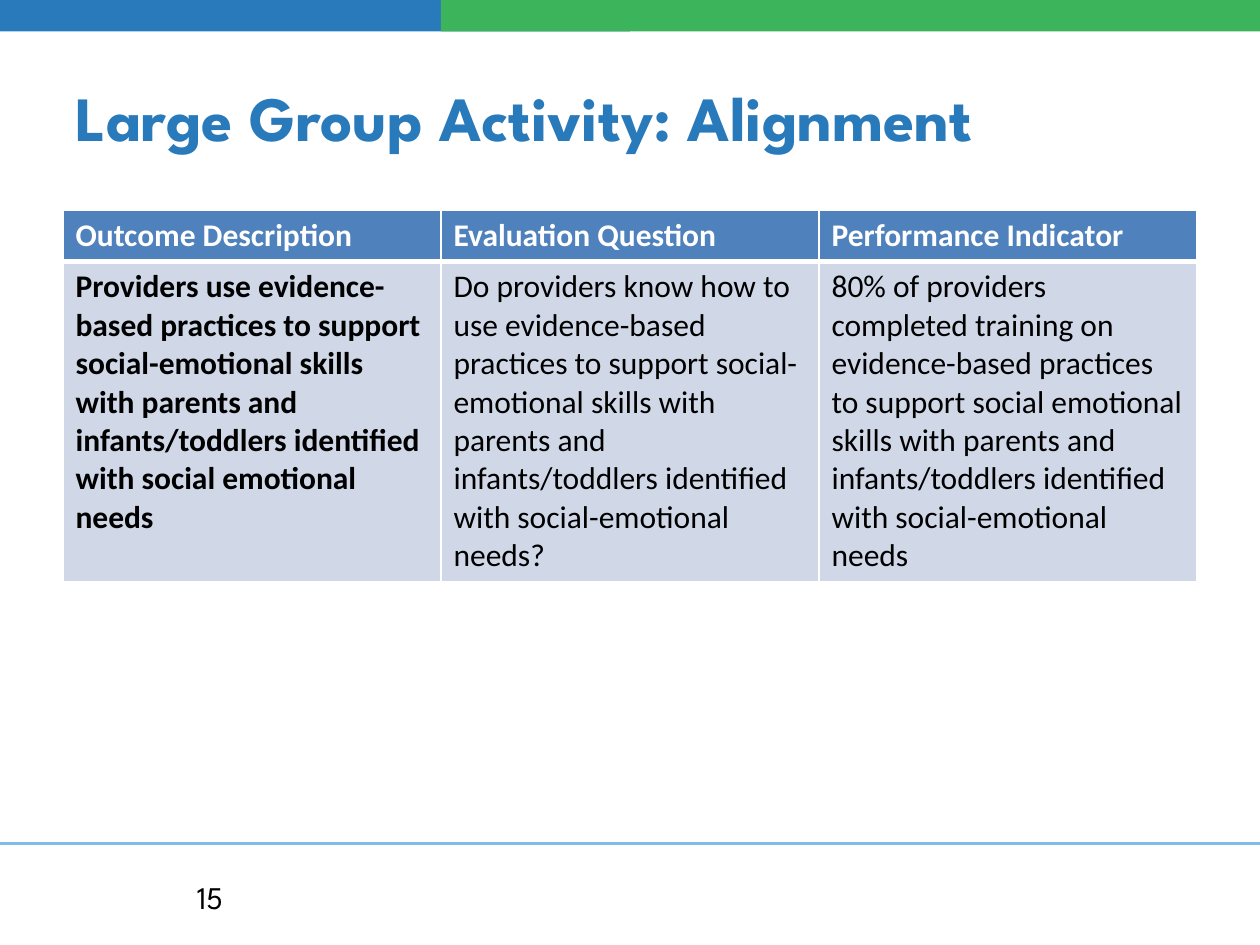
import pptx
import pptx.util
import pptx.dml.color
import pptx.enum.shapes
import pptx.enum.text
import pptx.oxml
import pptx.oxml.ns

Pt = pptx.util.Pt
RGB = pptx.dml.color.RGBColor.from_string
ALIGN = pptx.enum.text.PP_ALIGN
MIDDLE = pptx.enum.text.MSO_ANCHOR.MIDDLE
SHAPE = pptx.enum.shapes.MSO_SHAPE.RECTANGLE
STRAIGHT = pptx.enum.shapes.MSO_CONNECTOR.STRAIGHT

TITLE = "Large Group Activity: Alignment"
NUMBER = "15"
ROWS = [
    ["Outcome Description", "Evaluation Question", "Performance Indicator"],
    [
        "Providers use evidence-based practices to support social-emotional "
        "skills with parents and infants/toddlers identified with social "
        "emotional needs",
        "Do providers know how to use evidence-based practices to support "
        "social-emotional skills with parents and infants/toddlers "
        "identified with social-emotional needs?",
        "80% of providers completed training on evidence-based practices to "
        "support social emotional skills with parents and infants/toddlers "
        "identified with social-emotional needs",
    ],
]

THEME = {
    "blue": "297ABB", "green": "3CB45C", "rule": "7FBCE7",
    "head": "4F81BD", "body": "D0D8E8", "white": "FFFFFF", "black": "000000",
    "title": {"name": "League Spartan", "size": Pt(36), "bold": True},
    "number": {"name": "League Spartan", "size": Pt(18), "bold": False},
    "cell": {"name": "Calibri", "size": Pt(18)},
}
WIDTH, HEIGHT = 720, 540
BAR, BLEED = 18, 90
BARS = [(0, 360, "blue"), (252, WIDTH, "green")]
RULE = 481.9
MARGIN, TOP = 36, 120.2
HEIGHTS = [29.2, 180]


def style(para, look, color):
    for key, value in look.items():
        setattr(para.font, key, value)
    para.font.color.rgb = RGB(THEME[color])


def add_bar(slide, left, right, color):
    """Add a band that bleeds over the top edge."""
    bar = slide.shapes.add_shape(
        SHAPE, Pt(left), Pt(-BLEED), Pt(right - left), Pt(BLEED + BAR))
    bar.shadow.inherit = False
    bar.fill.solid()
    bar.fill.fore_color.rgb = RGB(THEME[color])
    bar.line.fill.background()


def add_rule(slide):
    rule = slide.shapes.add_connector(STRAIGHT, 0, Pt(RULE), Pt(WIDTH), Pt(RULE))
    rule.line.color.rgb = RGB(THEME["rule"])
    rule.line.width = Pt(2)
    rule._element.spPr.append(pptx.oxml.parse_xml(
        f'<a:effectLst {pptx.oxml.ns.nsdecls("a")}/>'))


def edge(cell, widths):
    """Give a cell white borders; widths are left, right, top, bottom."""
    props = cell._tc.get_or_add_tcPr()
    for spot, (side, width) in enumerate(zip("LRTB", widths)):
        props.insert(spot, pptx.oxml.parse_xml(
            f'<a:ln{side} {pptx.oxml.ns.nsdecls("a")} w="{Pt(width)}">'
            f'<a:solidFill><a:srgbClr val="{THEME["white"]}"/></a:solidFill>'
            f'</a:ln{side}>'))


def add_grid(slide):
    wide = WIDTH - 2 * MARGIN
    grid = slide.shapes.add_table(
        len(ROWS), len(ROWS[0]), Pt(MARGIN), Pt(TOP),
        Pt(wide), Pt(sum(HEIGHTS))).table
    for col in grid.columns:
        col.width = Pt(wide / len(ROWS[0]))
    for r, texts in enumerate(ROWS):
        head = r == 0
        grid.rows[r].height = Pt(HEIGHTS[r])
        for c, text in enumerate(texts):
            cell = grid.cell(r, c)
            cell.text = text
            cell.fill.solid()
            cell.fill.fore_color.rgb = RGB(THEME["head" if head else "body"])
            edge(cell, (1, 1, 1 if head else 3, 3 if head else 1))
            look = {**THEME["cell"], "bold": head or c == 0}
            style(cell.text_frame.paragraphs[0], look,
                  "white" if head else "black")


def fill_text(box, text, look, color, align):
    frame = box.text_frame
    frame.text = text
    frame.word_wrap = True
    frame.vertical_anchor = MIDDLE
    para = frame.paragraphs[0]
    para.alignment = align
    style(para, look, color)


def main():
    deck = pptx.Presentation()
    deck.slide_width, deck.slide_height = Pt(WIDTH), Pt(HEIGHT)
    slide = deck.slides.add_slide(deck.slide_layouts[5])

    add_rule(slide)
    for left, right, color in BARS:
        add_bar(slide, left, right, color)

    title = slide.shapes.title
    place = {"left": MARGIN, "top": 21.6,
             "width": WIDTH - 2 * MARGIN, "height": 90}
    for key, value in place.items():
        setattr(title, key, Pt(value))
    fill_text(title, TITLE, THEME["title"], "blue", ALIGN.LEFT)

    add_grid(slide)
    number = slide.shapes.add_textbox(Pt(MARGIN), Pt(498.2), Pt(168), Pt(28.8))
    fill_text(number, NUMBER, THEME["number"], "black", ALIGN.CENTER)
    deck.save("out.pptx")


if __name__ == "__main__":
    main()
